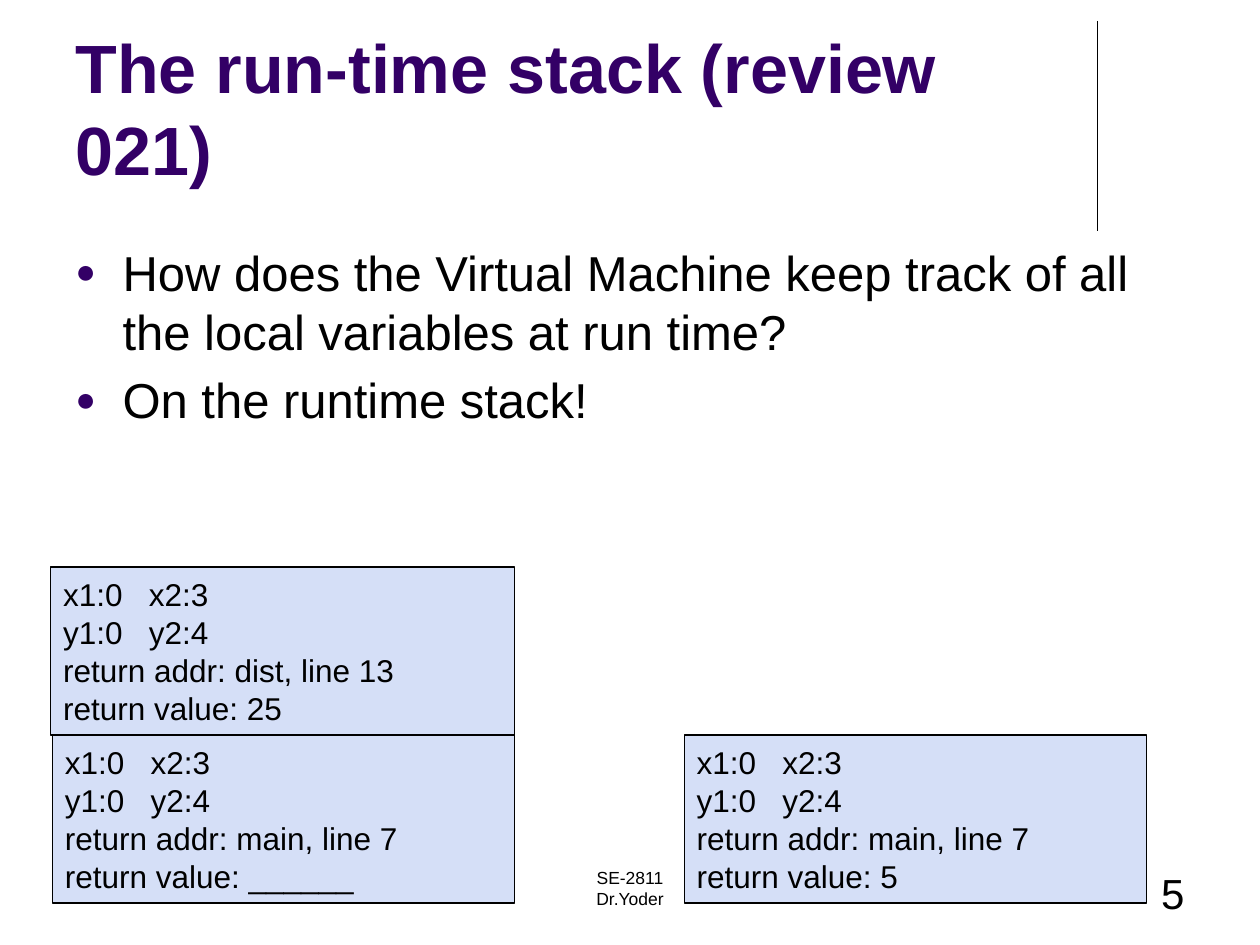
from dataclasses import dataclass

from lxml import etree
from pptx import Presentation
from pptx.dml.color import RGBColor
from pptx.enum.shapes import MSO_CONNECTOR, MSO_SHAPE
from pptx.enum.text import MSO_ANCHOR, MSO_AUTO_SIZE, PP_ALIGN
from pptx.oxml.ns import qn
from pptx.util import Pt

BLACK = RGBColor(0x00, 0x00, 0x00)
PURPLE = RGBColor(0x33, 0x00, 0x66)
FRAME_FILL = RGBColor(0xD5, 0xDF, 0xF7)
FONT = "Arial"
LEFT, CENTER, RIGHT = PP_ALIGN.LEFT, PP_ALIGN.CENTER, PP_ALIGN.RIGHT
TOP, MIDDLE, BOTTOM = MSO_ANCHOR.TOP, MSO_ANCHOR.MIDDLE, MSO_ANCHOR.BOTTOM
RECT, STRAIGHT = MSO_SHAPE.RECTANGLE, MSO_CONNECTOR.STRAIGHT
FRAME_HEIGHT = 96
LOWER_TOP = 420
TAB_STOP = 49


@dataclass
class StackFrame:
    left: float
    top: float
    width: float
    return_addr: str
    return_value: str

    def lines(self) -> list[str]:
        return ["x1:0\tx2:3", "y1:0\ty2:4",
                f"return addr: {self.return_addr}",
                f"return value: {self.return_value}"]


FRAMES = [
    StackFrame(30, LOWER_TOP, 264, "main, line 7", "______"),
    StackFrame(29, LOWER_TOP - FRAME_HEIGHT, 265, "dist, line 13", "25"),
    StackFrame(391, LOWER_TOP, 264, "main, line 7", "5"),
]


def add_bullet(p) -> None:
    pPr = p._p.get_or_add_pPr()
    pPr.set("marL", str(Pt(27)))
    pPr.set("indent", str(-Pt(27)))
    color = etree.SubElement(pPr, qn("a:buClr"))
    etree.SubElement(color, qn("a:srgbClr"), val=str(PURPLE))
    etree.SubElement(pPr, qn("a:buSzPct"), val="70000")
    etree.SubElement(pPr, qn("a:buFont"), typeface=FONT)
    etree.SubElement(pPr, qn("a:buChar"), char="●")


def add_tab_stop(p) -> None:
    tabs = etree.SubElement(p._p.get_or_add_pPr(), qn("a:tabLst"))
    etree.SubElement(tabs, qn("a:tab"), pos=str(Pt(TAB_STOP)), algn="l")


def write_text(tf, lines: list[str], *, size: float, color: RGBColor = BLACK,
               bold: bool = False, align=LEFT, anchor=TOP,
               bullets: bool = False, gap: float = 0) -> None:
    tf.word_wrap = True
    tf.auto_size = MSO_AUTO_SIZE.NONE
    tf.vertical_anchor = anchor
    for i, line in enumerate(lines):
        p = tf.add_paragraph() if i else tf.paragraphs[0]
        p.alignment = align
        if i and gap:
            p.space_before = Pt(gap)
        if bullets:
            add_bullet(p)
        if "\t" in line:
            add_tab_stop(p)
        r = p.add_run()
        r.text = line
        r.font.name = FONT
        r.font.size = Pt(size)
        r.font.bold = bold
        r.font.color.rgb = color


def add_text(s, left: float, top: float, width: float, height: float,
             lines: list[str], **style) -> None:
    box = s.shapes.add_textbox(Pt(left), Pt(top), Pt(width), Pt(height))
    write_text(box.text_frame, lines, **style)


def add_frame(s, frame: StackFrame) -> None:
    sp = s.shapes.add_shape(RECT, Pt(frame.left), Pt(frame.top),
                            Pt(frame.width), Pt(FRAME_HEIGHT))
    sp.shadow.inherit = False
    sp.fill.solid()
    sp.fill.fore_color.rgb = FRAME_FILL
    sp.line.color.rgb = BLACK
    sp.line.width = Pt(0.75)
    write_text(sp.text_frame, frame.lines(), size=18, anchor=MIDDLE)


def add_line(s, x1: float, y1: float, x2: float, y2: float) -> None:
    line = s.shapes.add_connector(STRAIGHT, Pt(x1), Pt(y1), Pt(x2), Pt(y2))
    line.line.color.rgb = BLACK
    line.line.width = Pt(0.75)
    etree.SubElement(line._element.spPr, qn("a:effectLst"))


def main() -> None:
    prs = Presentation()
    prs.slide_width, prs.slide_height = Pt(720), Pt(540)
    s = prs.slides.add_slide(prs.slide_layouts[5])

    # Title and the rule beside it
    add_line(s, 627, 12, 627, 132)
    title = s.shapes.title
    title.left, title.top = Pt(36), Pt(9.5)
    title.width, title.height = Pt(593), Pt(102)
    write_text(title.text_frame, ["The run-time stack (review 021)"],
               size=39, color=PURPLE, bold=True, anchor=BOTTOM)

    # Bulleted question and answer
    add_text(s, 36, 135, 648, 347,
             ["How does the Virtual Machine keep track of all the local "
              "variables at run time?", "On the runtime stack!"],
             size=28, bullets=True, gap=5.6)

    # Footer and slide number
    add_text(s, 246, 492, 228, 36, ["SE-2811", "Dr.Yoder"],
             size=10, align=CENTER)
    add_text(s, 516, 492, 168, 36, ["5"], size=24, align=RIGHT)

    # Stack frames
    for frame in FRAMES:
        add_frame(s, frame)

    prs.save("out.pptx")


if __name__ == "__main__":
    main()
